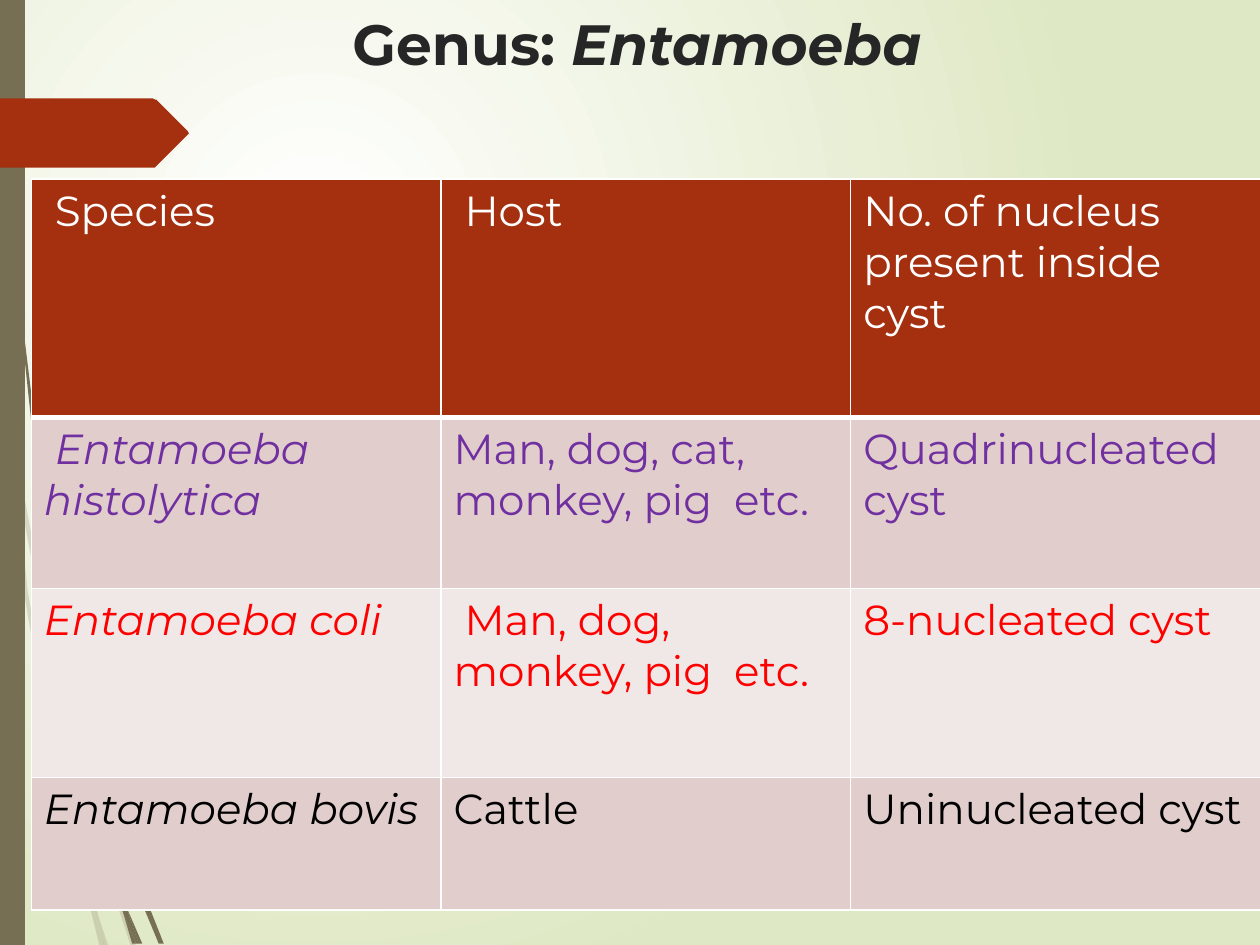
from dataclasses import dataclass

from lxml import etree
from pptx import Presentation
from pptx.dml.color import RGBColor
from pptx.enum.text import MSO_ANCHOR, PP_ALIGN
from pptx.oxml.ns import qn
from pptx.util import Cm, Pt

CENTER = PP_ALIGN.CENTER
TOP = MSO_ANCHOR.TOP

FONT = "Montserrat"
TITLE_FONT = "League Spartan"
BROWN, RUST, WHITE = "766F54", "A53010", "FFFFFF"
ROSE, PALE_ROSE = "E1CDCC", "F0E8E7"
OUTLINE_UNIT = Cm(0.0254)
FAINT = 20

Points = list[tuple[float, float]]


@dataclass
class Run:
    text: str
    italic: bool = False
    bold: bool = False
    font: str = FONT


@dataclass
class SpeciesRow:
    height: float
    fill: str
    color: str
    cells: list[list[Run]]
    bottom_border: float = 1


FAINT_STEMS: list[Points] = [
    [(8, 350), (6, 322), (0, 282), (0, 299), (7, 344)],
    [(40, 522), (59, 599), (59, 586), (43, 520), (10, 345), (12, 376)],
    [(64, 607), (61, 596), (61, 610), (85, 694), (104, 751), (108, 751), (88, 692)],
    [(83, 751), (86, 751), (73, 711)],
    [(64, 683), (48, 619), (22, 469), (12, 376), (8, 350), (19, 470), (45, 621),
     (64, 693), (70, 714), (69, 707)],
    [(58, 599), (60, 646), (64, 683), (67, 692), (73, 711), (72, 706), (63, 646),
     (61, 610), (61, 608)],
    [(61, 584), (76, 462), (111, 349), (159, 245), (187, 198), (201, 175), (217, 154),
     (217, 153), (201, 175), (186, 197), (158, 244), (110, 348), (75, 461), (59, 584),
     (59, 586), (61, 596)],
    [(70, 714), (79, 751), (82, 751)],
    [(61, 608), (61, 610), (61, 596), (59, 586), (58, 599)],
    [(67, 692), (65, 683), (69, 707), (70, 714), (82, 751), (83, 751), (73, 711)],
]

SOLID_STEMS: list[Points] = [
    [(5, 110), (14, 233), (27, 355), (46, 477), (47, 481), (45, 457), (45, 453),
     (30, 355), (15, 232), (6, 109), (4, 48), (3, 0), (2, 0), (3, 48)],
    [(73, 592), (88, 645), (88, 633), (88, 631), (77, 590), (50, 472), (53, 505)],
    [(94, 649), (91, 641), (91, 656), (109, 708), (126, 749), (130, 749), (113, 706)],
    [(91, 691), (81, 657), (60, 556), (53, 505), (47, 477), (56, 557), (77, 659),
     (92, 708), (97, 722), (96, 717)],
    [(50, 472), (48, 453), (44, 349), (48, 245), (52, 193), (58, 141), (51, 193),
     (47, 245), (43, 349), (45, 449), (49, 472)],
    [(110, 749), (113, 749), (100, 719)],
    [(47, 477), (53, 505), (50, 472), (49, 472), (45, 449), (45, 453)],
    [(91, 633), (103, 552), (131, 476), (169, 406), (191, 374), (203, 359), (216, 344),
     (215, 344), (203, 358), (191, 373), (168, 405), (129, 474), (101, 551), (88, 631),
     (91, 641)],
    [(97, 722), (105, 749), (108, 749)],
    [(88, 645), (91, 691), (96, 706), (100, 719), (100, 716), (91, 656), (90, 651)],
    [(88, 645), (90, 651), (91, 656), (91, 641), (88, 631), (88, 633)],
    [(96, 706), (91, 691), (96, 717), (97, 722), (108, 749), (110, 749), (100, 719)],
]

SIDE_BAR: Points = [(0, 0), (20, 0), (20, 750), (0, 750)]
PENNANT: Points = [(149, 107), (124, 132), (123, 133), (121, 133), (0, 133), (0, 78),
                   (121, 78), (123, 79), (124, 79), (149, 104), (149.5, 105.5)]

TITLE = [Run(" ", font=TITLE_FONT), Run("Genus: ", bold=True),
         Run("Entamoeba", italic=True, bold=True)]

SPECIES_ROWS = [
    SpeciesRow(4.8, RUST, WHITE, [
        [Run(" Species")], [Run(" Host")],
        [Run("No. of nucleus present inside cyst")]], bottom_border=3),
    SpeciesRow(3.45, ROSE, "7030A0", [
        [Run(" "), Run("Entamoeba histolytica", italic=True)],
        [Run("Man, dog, cat, monkey, pig  etc.")], [Run("Quadrinucleated cyst")]]),
    SpeciesRow(3.81, PALE_ROSE, "FF0000", [
        [Run("Entamoeba coli", italic=True)],
        [Run(" Man, dog, monkey, pig  etc.")], [Run("8-nucleated cyst")]]),
    SpeciesRow(2.67, ROSE, "000000", [
        [Run("Entamoeba bovis", italic=True)],
        [Run("Cattle")], [Run("Uninucleated cyst")]]),
]


def rgb(color: str) -> RGBColor:
    return RGBColor.from_string(color)


def paint_background(slide) -> None:
    fill = slide.background.fill
    fill.gradient()
    for stop, color in zip(fill.gradient_stops, (WHITE, "DFE8C4")):
        stop.color.rgb = rgb(color)
    fill.gradient_stops[0].position = 0
    fill.gradient_stops[1].position = 1
    gradient = slide.element.find(".//" + qn("a:gradFill"))
    linear = gradient.find(qn("a:lin"))
    radial = etree.Element(qn("a:path"), path="circle")
    etree.SubElement(radial, qn("a:fillToRect"),
                     l="50000", t="50000", r="100000", b="100000")
    gradient.replace(linear, radial)


def draw_outline(slide, points: Points, color: str, opacity: int = 100) -> None:
    builder = slide.shapes.build_freeform(*points[0], scale=OUTLINE_UNIT)
    builder.add_line_segments(points[1:], close=True)
    outline = builder.convert_to_shape()
    outline.shadow.inherit = False
    outline.line.fill.background()
    outline.fill.solid()
    outline.fill.fore_color.rgb = rgb(color)
    if opacity < 100:
        solid_color = outline.element.spPr.find(".//" + qn("a:srgbClr"))
        etree.SubElement(solid_color, qn("a:alpha"), val=str(opacity * 1000))


def add_runs(paragraph, runs: list[Run], size: float, color: str) -> None:
    for part in runs:
        run = paragraph.add_run()
        run.text = part.text
        run.font.name = part.font
        run.font.size = Pt(size)
        run.font.bold = part.bold
        run.font.italic = part.italic
        run.font.color.rgb = rgb(color)


def draw_title(slide) -> None:
    frame = slide.shapes.add_textbox(0, 0, Cm(25.4), Cm(2.74)).text_frame
    frame.word_wrap = True
    frame.vertical_anchor = TOP
    frame.margin_top = Cm(0.18)
    frame.paragraphs[0].alignment = CENTER
    add_runs(frame.paragraphs[0], TITLE, 32.4, "262626")


def add_border(cell, side: str, width: float) -> None:
    border = etree.SubElement(cell._tc.get_or_add_tcPr(), qn(f"a:ln{side}"),
                              w=str(Pt(width)))
    fill = etree.SubElement(border, qn("a:solidFill"))
    etree.SubElement(fill, qn("a:srgbClr"), val=WHITE)


def draw_species_table(slide, rows: list[SpeciesRow]) -> None:
    column_count = len(rows[0].cells)
    table = slide.shapes.add_table(
        len(rows), column_count, Cm(0.63), Cm(3.61), Cm(8.26 * column_count),
        Cm(sum(row.height for row in rows))).table
    for column in table.columns:
        column.width = Cm(8.26)
    for row_index, row in enumerate(rows):
        table.rows[row_index].height = Cm(row.height)
        for column_index, runs in enumerate(row.cells):
            cell = table.cell(row_index, column_index)
            for side in "LRT":
                add_border(cell, side, 1)
            add_border(cell, "B", row.bottom_border)
            cell.fill.solid()
            cell.fill.fore_color.rgb = rgb(row.fill)
            add_runs(cell.text_frame.paragraphs[0], runs, 24, row.color)


def main() -> None:
    presentation = Presentation()
    presentation.slide_width = Cm(25.4)
    presentation.slide_height = Cm(19.05)
    slide = presentation.slides.add_slide(presentation.slide_layouts[6])
    paint_background(slide)
    for stem in FAINT_STEMS:
        draw_outline(slide, stem, BROWN, FAINT)
    for stem in SOLID_STEMS:
        draw_outline(slide, stem, BROWN)
    draw_outline(slide, SIDE_BAR, BROWN)
    draw_outline(slide, PENNANT, RUST)
    draw_title(slide)
    draw_species_table(slide, SPECIES_ROWS)
    presentation.save("out.pptx")


if __name__ == "__main__":
    main()
